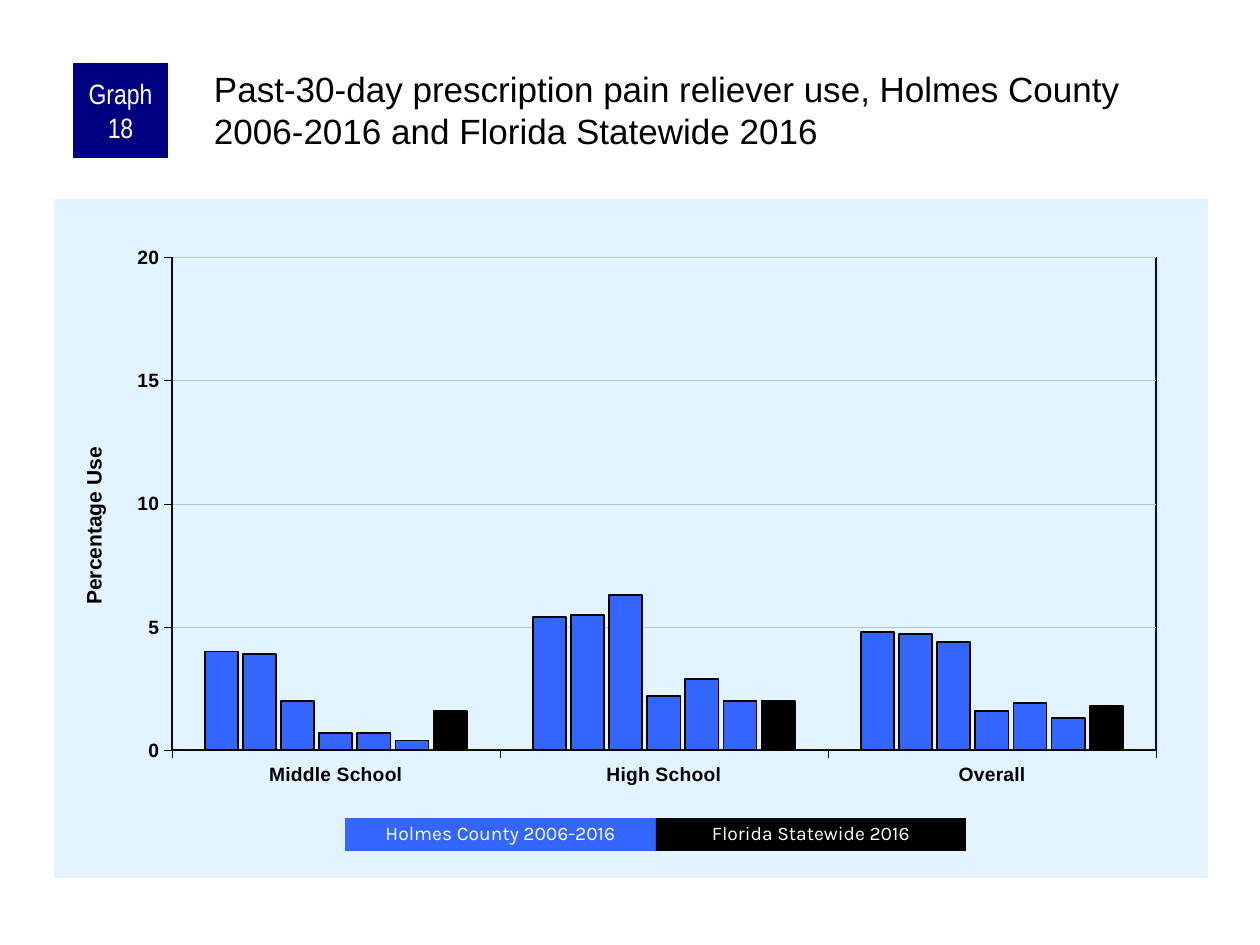
from lxml.etree import fromstring
from pptx import Presentation
from pptx.chart.data import CategoryChartData
from pptx.dml.color import RGBColor
from pptx.enum.chart import XL_CHART_TYPE, XL_TICK_MARK
from pptx.enum.shapes import MSO_SHAPE
from pptx.enum.text import MSO_ANCHOR, PP_ALIGN
from pptx.oxml.ns import nsdecls, qn
from pptx.util import Pt

EMU_PER_PX = 914400 / 126
BLACK, WHITE, NAVY, BLUE = "000000", "FFFFFF", "000080", "3366FF"


def px(*lengths):
    return [round(length * EMU_PER_PX) for length in lengths]


def rgb(hex_color):
    return RGBColor.from_string(hex_color)


prs = Presentation()
prs.slide_width, prs.slide_height = px(1260, 945)
slide = prs.slides.add_slide(prs.slide_layouts[6])

# Chart data: one series per survey, the last one statewide
surveys = [
    (4, 5.4, 4.8),
    (3.9, 5.5, 4.7),
    (2, 6.3, 4.4),
    (0.7, 2.2, 1.6),
    (0.7, 2.9, 1.9),
    (0.4, 2, 1.3),
    (1.6, 2, 1.8),
]
usage = CategoryChartData()
usage.categories = ["Middle School", "High School", "Overall"]
for number, percentages in enumerate(surveys, 1):
    usage.add_series(f"Series {number}", percentages)

chart = slide.shapes.add_chart(
    XL_CHART_TYPE.COLUMN_CLUSTERED, *px(54, 199, 1154, 679), usage
).chart
chart.has_legend = False
chart.has_title = False
chart.font.name = "Arial"
chart.font.size = Pt(8)
chart.font.color.rgb = rgb(BLACK)

columns = chart.plots[0]
columns.gap_width = 200
columns.overlap = -15
columns.vary_by_categories = False
for series in columns.series:
    series.format.fill.solid()
    series.format.fill.fore_color.rgb = rgb(BLUE)
    series.format.line.color.rgb = rgb(BLACK)
    series.format.line.width = Pt(1)
series.format.fill.fore_color.rgb = rgb(BLACK)

for axis in (chart.category_axis, chart.value_axis):
    axis.major_tick_mark = XL_TICK_MARK.OUTSIDE
    axis.minor_tick_mark = XL_TICK_MARK.NONE
    axis.format.line.color.rgb = rgb(BLACK)
    axis.format.line.width = Pt(0.25)
    labels = axis.tick_labels.font
    labels.name = "Arial"
    labels.size = Pt(11)
    labels.bold = True
    labels.color.rgb = rgb(BLACK)

percent_axis = chart.value_axis
percent_axis.minimum_scale = 0
percent_axis.maximum_scale = 20
percent_axis.major_unit = 5
percent_axis.major_gridlines.format.line.color.rgb = rgb("C0C0C0")
percent_axis.major_gridlines.format.line.width = Pt(0.25)
axis_title = percent_axis.axis_title
axis_title.text_frame.text = "Percentage Use"
title_font = axis_title.text_frame.paragraphs[0].runs[0].font
title_font.name = "Arial"
title_font.size = Pt(12)
title_font.bold = True
title_font.color.rgb = rgb(BLACK)

# Fixed positions of the plot and the axis title, as shares of the chart
plot_area = chart._chartSpace.chart.plotArea
title_element = axis_title._element
for parent, position, layout in (
    (plot_area, 0,
     '<c:layoutTarget val="inner"/><c:xMode val="edge"/><c:yMode val="edge"/>'
     '<c:x val="0.102"/><c:y val="0.086"/><c:w val="0.853"/><c:h val="0.726"/>'),
    (title_element, 1,
     '<c:xMode val="edge"/><c:yMode val="edge"/>'
     '<c:x val="0.02"/><c:y val="0.36"/>'),
):
    for old_layout in parent.findall(qn("c:layout")):
        parent.remove(old_layout)
    parent.insert(position, fromstring(
        f'<c:layout {nsdecls("c")}><c:manualLayout>{layout}'
        '</c:manualLayout></c:layout>'))

plot_area.append(fromstring(
    f'<c:spPr {nsdecls("c", "a")}><a:noFill/><a:ln w="12700"><a:solidFill>'
    f'<a:srgbClr val="{NAVY}"/></a:solidFill></a:ln></c:spPr>'))
chart._chartSpace.chart.addnext(fromstring(
    f'<c:spPr {nsdecls("c", "a")}><a:solidFill><a:srgbClr val="E1F4FF"/>'
    '</a:solidFill><a:ln><a:noFill/></a:ln></c:spPr>'))

# Graph number and legend
for text, box, fill, font_name, size, spacing, margins in (
    ("Graph 18", (73, 63, 95, 95), NAVY, "Arial Narrow", 16, 1, (6, 0)),
    ("Holmes County 2006-2016", (345, 818, 311, 33), BLUE, "Karla", 11, 0.9, (13, 6)),
    ("Florida Statewide 2016", (656, 818, 310, 33), BLACK, "Karla", 11, 0.9, (13, 6)),
):
    label = slide.shapes.add_shape(MSO_SHAPE.RECTANGLE, *px(*box))
    label.shadow.inherit = False
    label.fill.solid()
    label.fill.fore_color.rgb = rgb(fill)
    label.line.fill.background()
    frame = label.text_frame
    frame.word_wrap = True
    frame.vertical_anchor = MSO_ANCHOR.MIDDLE
    frame.margin_left, frame.margin_top = px(*margins)
    frame.margin_right, frame.margin_bottom = px(*margins)
    frame.text = text
    paragraph = frame.paragraphs[0]
    paragraph.alignment = PP_ALIGN.CENTER
    paragraph.line_spacing = spacing
    font = paragraph.runs[0].font
    font.name = font_name
    font.size = Pt(size)
    font.color.rgb = rgb(WHITE)

# Heading
heading = slide.shapes.add_textbox(*px(210, 63, 998, 105)).text_frame
heading.word_wrap = True
heading.margin_left, heading.margin_top = px(4, 4)
heading.margin_right = heading.margin_bottom = 0
heading.text = (
    "Past-30-day prescription pain reliever use, Holmes County "
    "2006-2016 and Florida Statewide 2016"
)
heading_font = heading.paragraphs[0].runs[0].font
heading_font.name = "Arial"
heading_font.size = Pt(20)
heading_font.color.rgb = rgb(BLACK)

prs.save("out.pptx")
